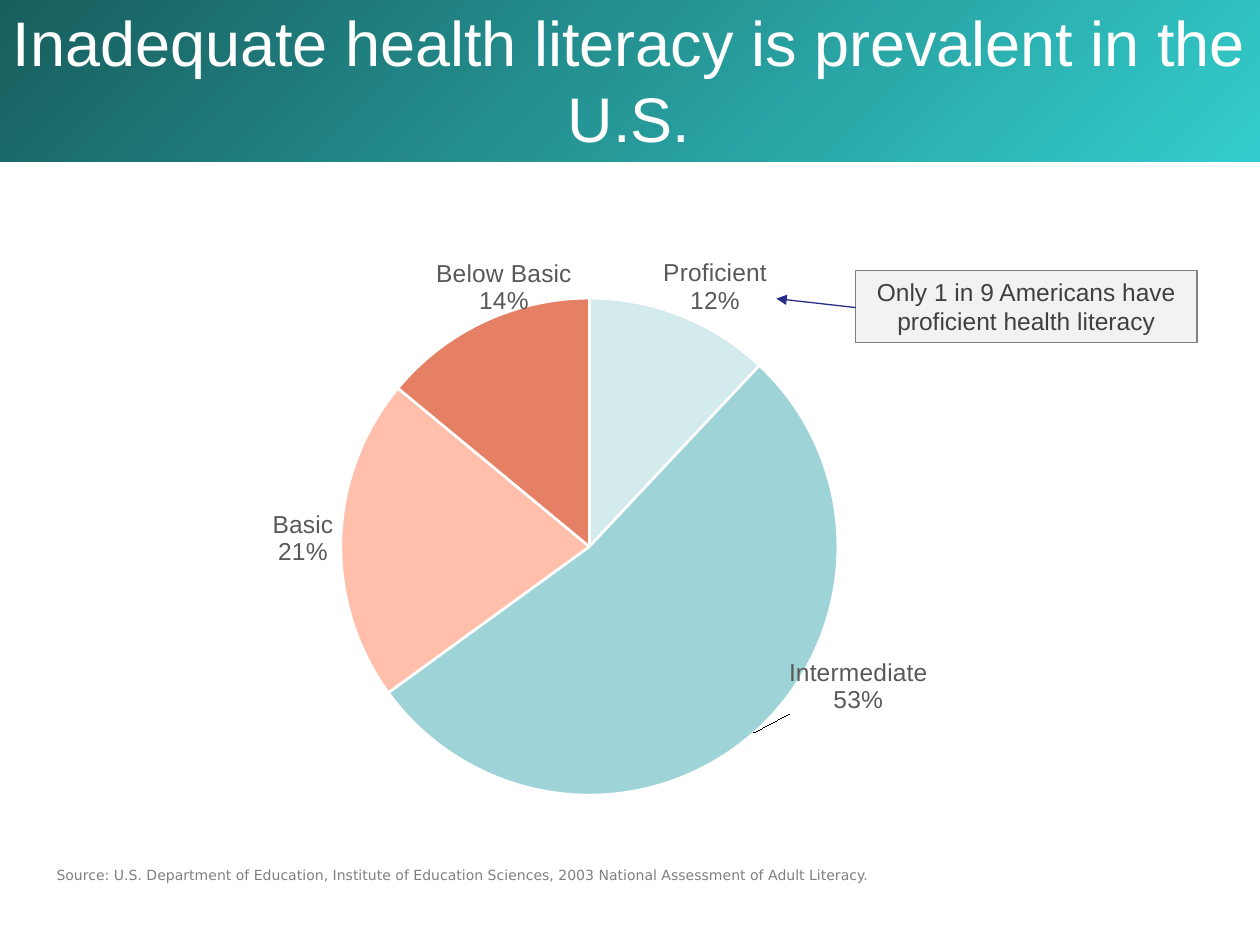
from dataclasses import dataclass

from lxml import etree
from pptx import Presentation
from pptx.chart.data import CategoryChartData
from pptx.dml.color import RGBColor as RGB
from pptx.enum.chart import XL_CHART_TYPE as ChartType, XL_LABEL_POSITION as LabelPos
from pptx.enum.shapes import MSO_CONNECTOR as Connector, MSO_SHAPE as Shape
from pptx.enum.text import MSO_ANCHOR as Anchor, PP_ALIGN as Align
from pptx.oxml import parse_xml
from pptx.oxml.ns import nsdecls, qn
from pptx.util import Cm, Pt


@dataclass(frozen=True)
class Theme:
    font: str = "Arial"
    source_font: str = "DejaVu Sans"
    title_size: int = 36
    body_size: int = 14
    source_size: int = 8
    teal_dark: str = "185E5E"
    teal_light: str = "33CCCC"
    white: str = "FFFFFF"
    box_fill: str = "F2F2F2"
    grey: str = "808080"
    box_text: str = "404040"
    label_text: str = "595959"
    arrow: str = "2A2A89"


theme = Theme()


def set_font(font, name, size, color):
    font.name, font.size = name, Pt(size)
    font.color.rgb = RGB.from_string(color)


def write(shape, text, name, size, color, align=Align.LEFT, anchor=Anchor.TOP):
    tf = shape.text_frame
    tf.word_wrap = True
    tf.vertical_anchor = anchor
    tf.text = text
    p = tf.paragraphs[0]
    p.alignment = align
    set_font(p.runs[0].font, name, size, color)


prs = Presentation()
prs.slide_width, prs.slide_height = Cm(25.4), Cm(19.05)
s = prs.slides.add_slide(prs.slide_layouts[6])

# Title band
band = s.shapes.add_shape(Shape.RECTANGLE, Cm(0), Cm(-0.08), Cm(25.4), Cm(3.33))
band.shadow.inherit = False
band.line.fill.background()
band.fill.gradient()
band.fill.gradient_angle = 315
for stop, color, position in zip(band.fill.gradient_stops,
                                 (theme.teal_dark, theme.teal_light), (0, 1)):
    stop.color.rgb = RGB.from_string(color)
    stop.position = position

title = s.shapes.add_textbox(Cm(0), Cm(0), Cm(25.37), Cm(3.2))
write(title, "Inadequate health literacy is prevalent in the U.S.",
      theme.font, theme.title_size, theme.white, Align.CENTER, Anchor.MIDDLE)

# Callout with its arrow
callout = s.shapes.add_shape(Shape.RECTANGLE, Cm(17.25), Cm(5.45), Cm(6.88), Cm(1.46))
callout.shadow.inherit = False
callout.fill.solid()
callout.fill.fore_color.rgb = RGB.from_string(theme.box_fill)
callout.line.color.rgb = RGB.from_string(theme.grey)
callout.line.width = Pt(0.75)
write(callout, "Only 1 in 9 Americans have proficient health literacy",
      theme.font, theme.body_size, theme.box_text, Align.CENTER)

arrow = s.shapes.add_connector(Connector.STRAIGHT, Cm(17.25), Cm(6.2), Cm(15.65), Cm(6.02))
arrow.line.color.rgb = RGB.from_string(theme.arrow)
arrow.line.width = Pt(0.75)
etree.SubElement(arrow.line._get_or_add_ln(), qn("a:tailEnd"), type="triangle")
etree.SubElement(arrow._element.spPr, qn("a:effectLst"))

source = s.shapes.add_textbox(Cm(0.89), Cm(17.35), Cm(22.6), Cm(0.6))
write(source, "Source: U.S. Department of Education, Institute of Education Sciences, "
      "2003 National Assessment of Adult Literacy.",
      theme.source_font, theme.source_size, theme.grey)

# Pie: category, percent, colour, label shift as a share of the chart
slices = [
    ("Proficient", 12, "D3EBED", (-0.02, 0.01)),
    ("Intermediate", 53, "9ED3D7", (0.03, -0.13)),
    ("Basic", 21, "FFBFAB", None),
    ("Below Basic", 14, "E58065", (0.09, 0)),
]
data = CategoryChartData()
data.categories = [name for name, *_ in slices]
data.add_series("Series 1", [value for _, value, *_ in slices])
chart = s.shapes.add_chart(ChartType.PIE, Cm(1.93), Cm(4.65), Cm(20.52), Cm(12.37), data).chart
chart.has_legend = False
chart.has_title = False
chart.font.name = theme.font
chart.font.size = Pt(theme.body_size)
plot = chart.plots[0]
plot.vary_by_categories = True
series = plot.series[0]

labels = series.data_labels
labels.show_value = False
labels.show_category_name = labels.show_percentage = True
labels.number_format, labels.number_format_is_linked = "0%", False
labels.position = LabelPos.OUTSIDE_END
set_font(labels.font, theme.font, theme.body_size, theme.label_text)

for i, (_, _, color, shift) in enumerate(slices):
    point = series.points[i]
    point.format.fill.solid()
    point.format.fill.fore_color.rgb = RGB.from_string(color)
    point.format.line.color.rgb = RGB.from_string(theme.white)
    point.format.line.width = Pt(1.5)
    if shift:
        point.data_label.position = LabelPos.OUTSIDE_END
        set_font(point.data_label.font, theme.font, theme.body_size, theme.label_text)
        dLbl = series._element.xpath(f"c:dLbls/c:dLbl[c:idx/@val='{i}']")[0]
        for tag, val in (("showVal", "0"), ("showCatName", "1"), ("showPercent", "1")):
            dLbl.find(qn(f"c:{tag}")).set("val", val)
        dLbl.find(qn("c:idx")).addnext(parse_xml(
            f'<c:layout {nsdecls("c")}><c:manualLayout>'
            f'<c:x val="{shift[0]}"/><c:y val="{shift[1]}"/>'
            '</c:manualLayout></c:layout>'))

# Category and percent on separate lines
for last in series._element.xpath(".//c:showPercent"):
    bubble = last.getnext()
    if bubble is not None and bubble.tag == qn("c:showBubbleSize"):
        last = bubble
    last.addnext(parse_xml(f'<c:separator {nsdecls("c")}>\n</c:separator>'))

# Fixed pie area inside the chart
plot_area = chart._chartSpace.chart.plotArea
for old in plot_area.findall(qn("c:layout")):
    plot_area.remove(old)
plot_area.insert(0, parse_xml(
    f'<c:layout {nsdecls("c")}><c:manualLayout><c:layoutTarget val="inner"/>'
    '<c:xMode val="edge"/><c:yMode val="edge"/>'
    '<c:x val="0.24"/><c:y val="0.11"/><c:w val="0.49"/><c:h val="0.81"/>'
    '</c:manualLayout></c:layout>'))

prs.save("out.pptx")
